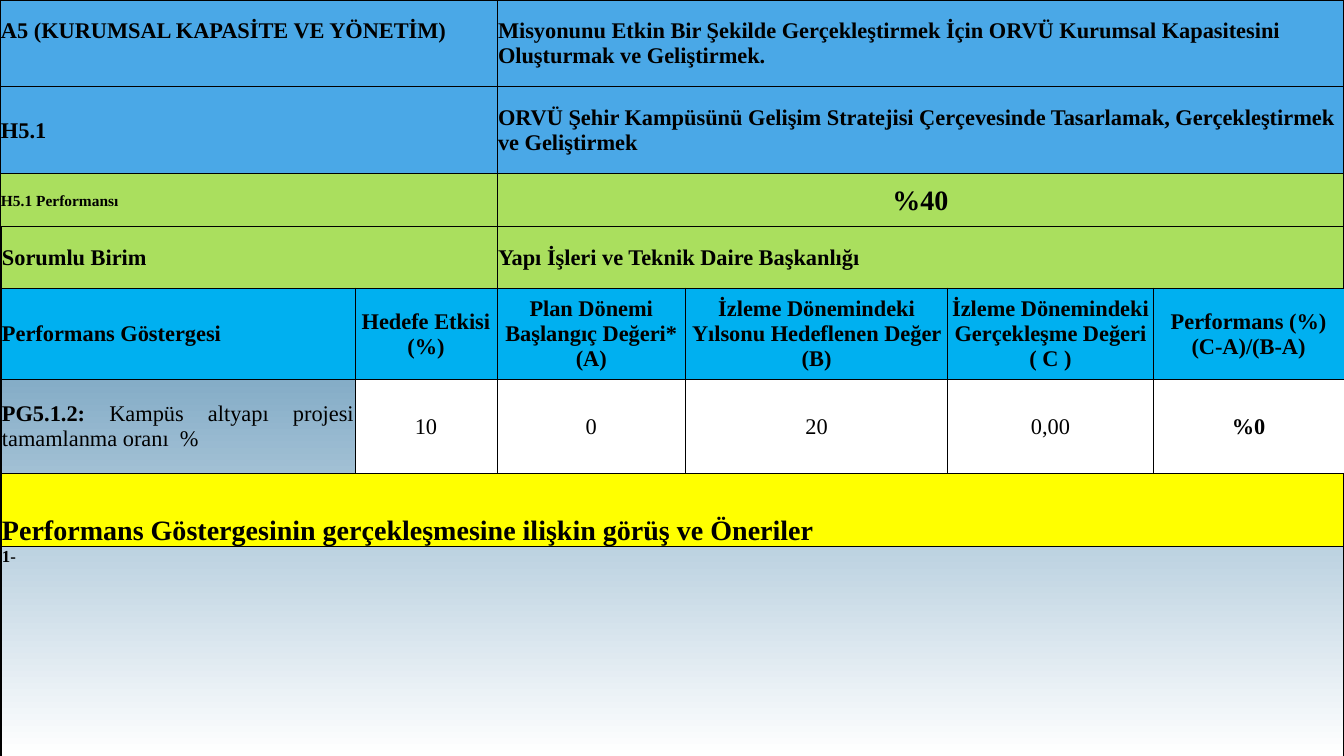
from dataclasses import dataclass

from lxml.etree import SubElement
from pptx import Presentation
from pptx.dml.color import RGBColor
from pptx.enum.text import MSO_ANCHOR, PP_ALIGN
from pptx.oxml.ns import qn
from pptx.util import Inches, Pt


@dataclass(frozen=True)
class Theme:
    font: str = "Times New Roman"
    ink: str = "000000"
    paper: str = "FFFFFF"
    sky_end: str = "06588E"
    goal: str = "4AA8E7"
    unit: str = "AADF5E"
    heading: str = "00B0F0"
    remark: str = "FFFF00"
    tiny: int = 11
    small: int = 12
    body: int = 16
    large: int = 20
    thin: float = 0.5
    thick: float = 1


THEME = Theme()
SLIDE_WIDTH, SLIDE_HEIGHT = 13.33, 7.5
LEFT, CENTER, JUSTIFY = PP_ALIGN.LEFT, PP_ALIGN.CENTER, PP_ALIGN.JUSTIFY


@dataclass(frozen=True)
class Entry:
    text: str
    fill: str | None = None
    span: int = 1
    size: int = THEME.body
    align: PP_ALIGN = LEFT
    bold: bool = True
    plain_tail: str = ""
    anchor: MSO_ANCHOR = MSO_ANCHOR.MIDDLE
    bottom: float = 0


@dataclass(frozen=True)
class Grid:
    left: float
    top: float
    columns: tuple
    rows: tuple
    entries: list
    heavy_below: tuple
    open_right: tuple = ()


HEADINGS = [
    "Hedefe Etkisi (%)",
    "Plan Dönemi Başlangıç Değeri* (A)",
    "İzleme Dönemindeki Yılsonu Hedeflenen Değer (B)",
    "İzleme Dönemindeki Gerçekleşme Değeri ( C )",
    "Performans (%) (C-A)/(B-A)",
]
VALUES = ["10", "0", "20", "0,00"]

GOAL = Grid(
    0, 0, (3.62, 1.31, 8.4), (0.86, 0.86, 0.54),
    [
        [
            Entry("A5 (KURUMSAL KAPASİTE VE YÖNETİM)", THEME.goal, 2, bottom=0.25),
            Entry("Misyonunu Etkin Bir Şekilde Gerçekleştirmek İçin ORVÜ Kurumsal "
                  "Kapasitesini Oluşturmak ve Geliştirmek.", THEME.goal),
        ],
        [
            Entry("H5.1", THEME.goal, 2, align=JUSTIFY),
            Entry("ORVÜ Şehir Kampüsünü Gelişim Stratejisi Çerçevesinde Tasarlamak, "
                  "Gerçekleştirmek ve Geliştirmek", THEME.goal),
        ],
        [
            Entry("H5.1 Performansı", THEME.unit, 2, THEME.tiny),
            Entry("%40", THEME.unit, size=THEME.large, align=CENTER),
        ],
    ],
    heavy_below=(),
)
INDICATOR = Grid(
    0.01, 2.25, (3.51, 1.41, 1.87, 2.6, 2.04, 1.89), (0.61, 0.9, 0.94, 0.72, 2.08),
    [
        [
            Entry("Sorumlu Birim", THEME.unit, 2),
            Entry("Yapı İşleri ve Teknik Daire Başkanlığı", THEME.unit, 4),
        ],
        [
            Entry("Performans Göstergesi", THEME.heading, align=JUSTIFY),
            *(Entry(heading, THEME.heading, align=CENTER) for heading in HEADINGS),
        ],
        [
            Entry("PG5.1.2: ", align=JUSTIFY,
                  plain_tail="Kampüs altyapı projesi tamamlanma oranı  %"),
            *(Entry(value, THEME.paper, align=CENTER, bold=False) for value in VALUES),
            Entry("%0", THEME.paper, align=CENTER),
        ],
        [Entry("Performans Göstergesinin gerçekleşmesine ilişkin görüş ve Öneriler",
               THEME.remark, 6, THEME.large, anchor=MSO_ANCHOR.BOTTOM)],
        [Entry("1-", span=6, size=THEME.small, anchor=MSO_ANCHOR.TOP)],
    ],
    heavy_below=(0, 2),
    open_right=(1, 2),
)


def rgb(code):
    return RGBColor.from_string(code)


def draw_borders(cell, widths):
    properties = cell._tc.get_or_add_tcPr()
    for side, width in widths.items():
        line = SubElement(properties, qn(f"a:ln{side}"), w=str(Pt(width)))
        if width:
            ink = SubElement(line, qn("a:solidFill"))
            SubElement(ink, qn("a:srgbClr"), val=THEME.ink)
        else:
            SubElement(line, qn("a:noFill"))


def write_entry(cell, entry):
    cell.margin_left = cell.margin_right = cell.margin_top = Inches(0.01)
    cell.margin_bottom = Inches(entry.bottom)
    cell.vertical_anchor = entry.anchor
    paragraph = cell.text_frame.paragraphs[0]
    paragraph.alignment = entry.align
    for text, bold in ((entry.text, entry.bold), (entry.plain_tail, False)):
        if text:
            run = paragraph.add_run()
            run.text = text
            run.font.name = THEME.font
            run.font.size = Pt(entry.size)
            run.font.bold = bold
            run.font.color.rgb = rgb(THEME.ink)


def fill_cell(cell, color):
    if color:
        cell.fill.solid()
        cell.fill.fore_color.rgb = rgb(color)
    else:
        cell.fill.background()


def add_grid(slide, grid):
    row_count, column_count = len(grid.rows), len(grid.columns)
    table = slide.shapes.add_table(
        row_count, column_count, Inches(grid.left), Inches(grid.top),
        Inches(sum(grid.columns)), Inches(sum(grid.rows)),
    ).table
    table.first_row = table.horz_banding = False
    for column, width in zip(table.columns, grid.columns):
        column.width = Inches(width)
    for row, height in zip(table.rows, grid.rows):
        row.height = Inches(height)

    def rule_below(row):
        return THEME.thick if row in grid.heavy_below else THEME.thin

    for row, entries in enumerate(grid.entries):
        right_edge = 0 if row in grid.open_right else THEME.thick
        start = 0
        for entry in entries:
            last = start + entry.span - 1
            widths = {
                "L": THEME.thin if start else THEME.thick,
                "R": right_edge if last == column_count - 1 else THEME.thin,
                "T": rule_below(row - 1),
                "B": rule_below(row),
            }
            for column in range(start, last + 1):
                draw_borders(table.cell(row, column), widths)
                fill_cell(table.cell(row, column), entry.fill)
            if entry.span > 1:
                table.cell(row, start).merge(table.cell(row, last))
            write_entry(table.cell(row, start), entry)
            start = last + 1


def main():
    deck = Presentation()
    deck.slide_width, deck.slide_height = Inches(SLIDE_WIDTH), Inches(SLIDE_HEIGHT)
    slide = deck.slides.add_slide(deck.slide_layouts.get_by_name("Blank"))
    sky = slide.background.fill
    sky.gradient()
    sky.gradient_angle = 90
    for stop, color in zip(sky.gradient_stops, (THEME.paper, THEME.sky_end)):
        stop.color.rgb = rgb(color)
    for grid in (GOAL, INDICATOR):
        add_grid(slide, grid)
    deck.save("out.pptx")


if __name__ == "__main__":
    main()
